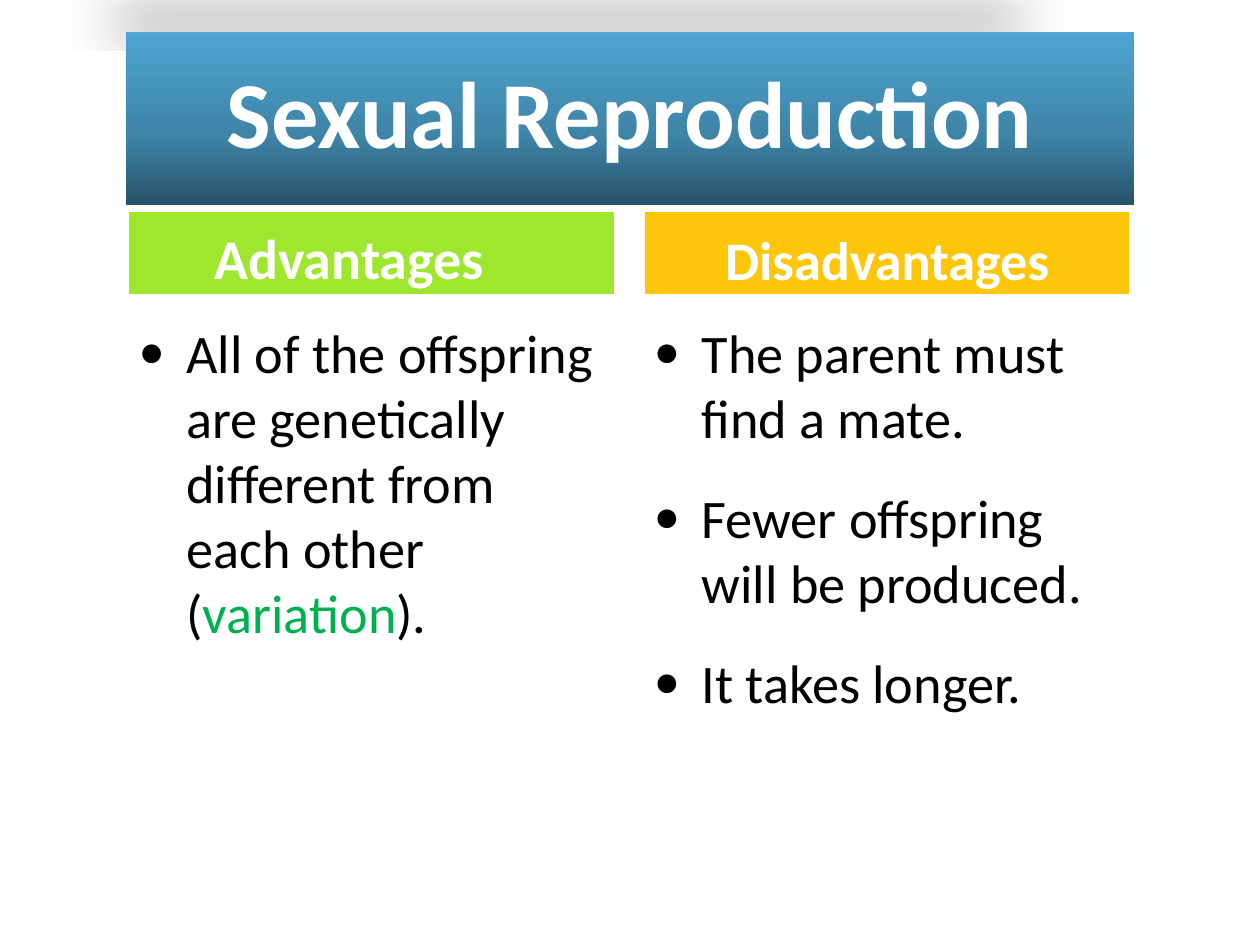
from lxml.etree import SubElement
from pptx import Presentation
from pptx.dml.color import RGBColor
from pptx.enum.text import MSO_ANCHOR, MSO_AUTO_SIZE, PP_ALIGN
from pptx.oxml import parse_xml
from pptx.oxml.ns import nsdecls, qn
from pptx.util import Pt

PX = 9144  # EMU per px, 100 px to the inch
COLORS = {
    "white": "FFFFFF", "black": "000000", "term": "00B050",
    "advantages": "9FE62F", "disadvantages": "FEC60B",
    "sky": "4EA5D1", "steel": "3E84A7", "navy": "275268",
}


def rgb(name):
    return RGBColor.from_string(COLORS[name])


def add_text(p, text, size=31, color="black", bold=False, font="Calibri"):
    r = p.add_run()
    r.text = text
    r.font.name, r.font.size, r.font.bold = font, Pt(size), bold
    r.font.color.rgb = rgb(color)


class ComparisonSlide:
    def __init__(self, prs):
        self.slide = prs.slides.add_slide(prs.slide_layouts[4])

    def place(self, index, box, anchor):
        """Move a placeholder and return it with its text frame."""
        s = self.slide.placeholders[index]
        s.left, s.top, s.width, s.height = (v * PX for v in box)
        tf = s.text_frame
        tf.word_wrap = True
        tf.auto_size = MSO_AUTO_SIZE.NONE
        tf.vertical_anchor = anchor
        return s, tf

    def title(self, text, box, stops):
        s, tf = self.place(0, box, MSO_ANCHOR.MIDDLE)
        p = tf.paragraphs[0]
        p.alignment, p.line_spacing = PP_ALIGN.CENTER, Pt(56)
        add_text(p, text, size=54, color="white", bold=True)
        # Vertical gradient and flattened shadow
        gs = "".join(f'<a:gs pos="{pos * 1000}"><a:srgbClr val="{COLORS[c]}"/></a:gs>'
                     for pos, c in stops)
        sp_pr = s._element.spPr
        sp_pr.append(parse_xml(
            f'<a:gradFill {nsdecls("a")}><a:gsLst>{gs}</a:gsLst>'
            '<a:lin ang="5400000" scaled="0"/></a:gradFill>'))
        sp_pr.append(parse_xml(
            f'<a:effectLst {nsdecls("a")}><a:outerShdw blurRad="{Pt(35)}" dist="{Pt(25)}"'
            ' dir="5400000" sx="90000" sy="-19000" rotWithShape="0">'
            f'<a:srgbClr val="{COLORS["black"]}"><a:alpha val="35000"/></a:srgbClr>'
            '</a:outerShdw></a:effectLst>'))

    def heading(self, index, text, box, fill, size):
        s, tf = self.place(index, box, MSO_ANCHOR.BOTTOM)
        s.fill.solid()
        s.fill.fore_color.rgb = rgb(fill)
        s.line.color.rgb = rgb("white")
        s.line.width = Pt(3.75)
        p = tf.paragraphs[0]
        p.alignment, p.space_before = PP_ALIGN.CENTER, Pt(20)
        add_text(p, text, size=size, color="white", bold=True)

    def bullets(self, index, items, box):
        """Each item is a list of (text, color) runs."""
        _, tf = self.place(index, box, MSO_ANCHOR.TOP)
        for i, runs in enumerate(items):
            p = tf.add_paragraph() if i else tf.paragraphs[0]
            p.space_before = Pt(20)
            p_pr = p._p.get_or_add_pPr()
            p_pr.set("marL", str(38 * PX))
            p_pr.set("indent", str(-38 * PX))
            SubElement(p_pr, qn("a:buSzPct")).set("val", "80000")
            SubElement(p_pr, qn("a:buChar")).set("char", "●")
            for text, color in runs:
                add_text(p, text, color=color)


def main():
    prs = Presentation()
    prs.slide_width, prs.slide_height = 1000 * PX, 750 * PX
    s = ComparisonSlide(prs)

    # Title band
    s.title("Sexual Reproduction", (100, 25, 800, 138),
            [(0, "sky"), (60, "steel"), (100, "navy")])

    # Two columns: heading above list
    columns = [
        ("Advantages\t", 32, "advantages", [
            [("All of the offspring are genetically different from each other (", "black"),
             ("variation", "term"), (").", "black")]]),
        ("Disadvantages", 31, "disadvantages", [
            [("The parent must find a mate.", "black")],
            [("Fewer offspring will be produced.", "black")],
            [("It takes longer.", "black")]]),
    ]
    for i, (name, size, fill, items) in enumerate(columns):
        x = 100 + 409 * i
        s.heading(1 + 2 * i, name, (x, 166, 390, 70), fill, size)
        s.bullets(2 + 2 * i, items, (x, 248, 390, 415))

    prs.save("out.pptx")


if __name__ == "__main__":
    main()
